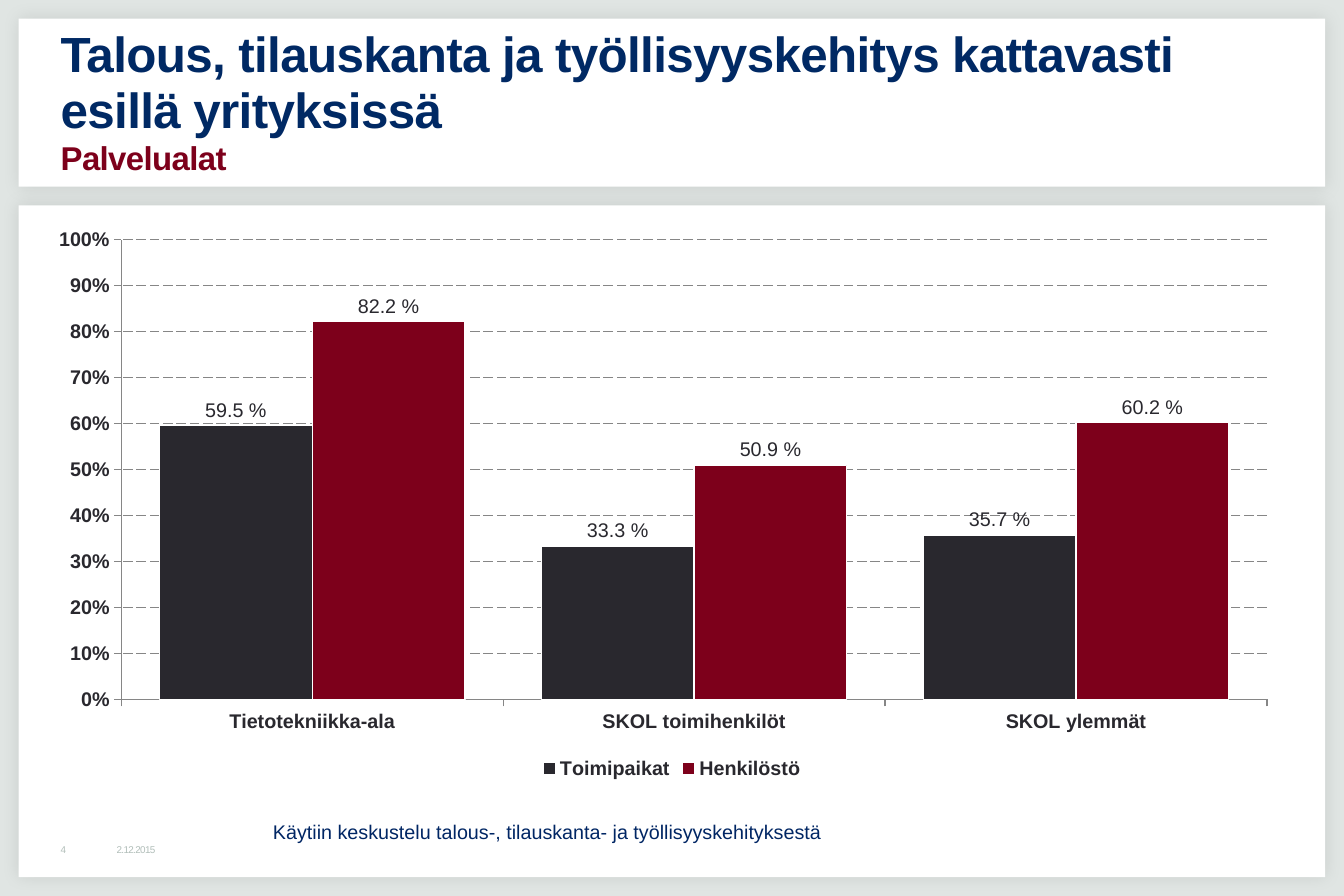
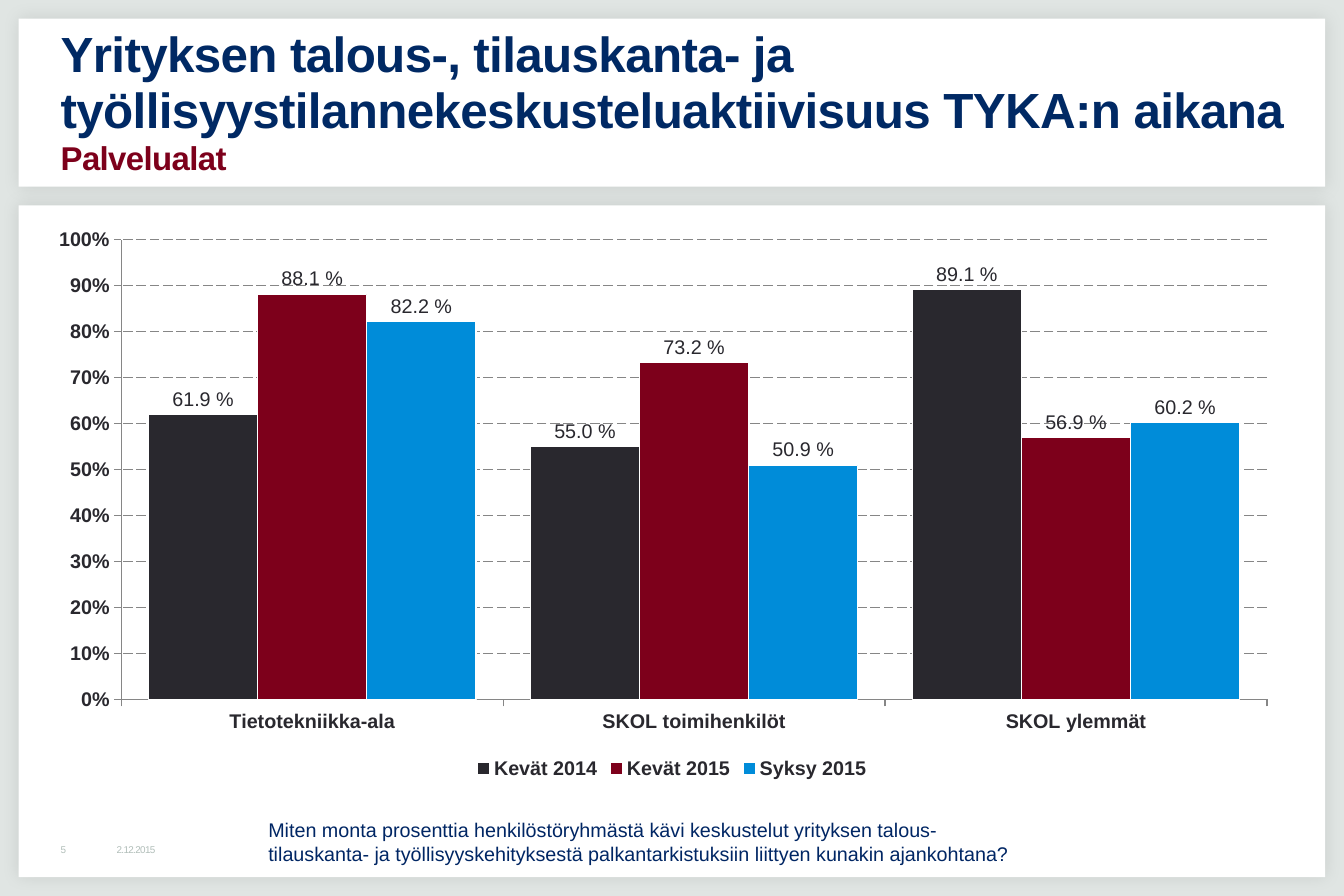
"""Build two column-chart slides on a shared white-panel master."""
import pptx
import pptx.chart.data
import pptx.dml.color
import pptx.enum.chart
import pptx.enum.dml
import pptx.enum.shapes
import pptx.enum.text
import pptx.oxml
import pptx.oxml.ns
import pptx.util

Cm = pptx.util.Cm
Pt = pptx.util.Pt
RGBColor = pptx.dml.color.RGBColor
qn = pptx.oxml.ns.qn

FONT = "Arial"
PAGE = RGBColor(0xE0, 0xE5, 0xE3)
WHITE = RGBColor(0xFF, 0xFF, 0xFF)
TITLE = RGBColor(0x00, 0x29, 0x64)
NOTE = RGBColor(0x00, 0x26, 0x64)
FOOTER = RGBColor(0xB1, 0xBE, 0xB9)
GRID = RGBColor(0x86, 0x86, 0x86)
DARK = RGBColor(0x29, 0x28, 0x2E)
RED = RGBColor(0x7D, 0x00, 0x1B)
BLUE = RGBColor(0x00, 0x8C, 0xD9)
SERIES_COLORS = (DARK, RED, BLUE)
TIGHT = "-40"

SUBTITLE = "Palvelualat"
DATE = "2.12.2015"
CATEGORIES = ("Tietotekniikka-ala", "SKOL toimihenkilöt", "SKOL ylemmät")
PANELS = ((0.4, 0.4, 28, 3.6), (0.4, 4.4, 28, 14.4))
PLOT = {"x": 0.053, "y": 0.028, "w": 0.93, "h": 0.821}
SLIDES = (
    {
        "number": "4",
        "title": "Talous, tilauskanta ja työllisyyskehitys kattavasti esillä yrityksissä",
        "series": (
            ("Toimipaikat", (0.595, 0.333, 0.357)),
            ("Henkilöstö", (0.822, 0.509, 0.602)),
        ),
        "note": "Käytiin keskustelu talous-, tilauskanta- ja työllisyyskehityksestä",
        "note_box": (5.6, 17.45, 15.4, 0.76),
    },
    {
        "number": "5",
        "title": "Yrityksen talous-, tilauskanta- ja "
                 "työllisyystilannekeskusteluaktiivisuus TYKA:n aikana",
        "series": (
            ("Kevät 2014", (0.619, 0.55, 0.891)),
            ("Kevät 2015", (0.881, 0.732, 0.569)),
            ("Syksy 2015", (0.822, 0.509, 0.602)),
        ),
        "note": "Miten monta prosenttia henkilöstöryhmästä kävi keskustelut yrityksen "
                "talous- tilauskanta- ja työllisyyskehityksestä palkantarkistuksiin "
                "liittyen kunakin ajankohtana?",
        "note_box": (5.5, 17.4, 16.9, 1.28),
    },
)


def box(lengths):
    return [Cm(v) for v in lengths]


def drawing(xml):
    return pptx.oxml.parse_xml(xml.replace(">", f" {pptx.oxml.ns.nsdecls('a')}>", 1))


def style_master(master, layout):
    fill = master.background.fill
    fill.solid()
    fill.fore_color.rgb = PAGE
    level = master.element.find(f".//{qn('p:titleStyle')}/{qn('a:lvl1pPr')}")
    level.set("algn", "l")
    level.insert(0, drawing('<a:lnSpc><a:spcPct val="95000"/></a:lnSpc>'))
    font = level.find(qn("a:defRPr"))
    for name, value in (("sz", "3000"), ("b", "1"), ("spc", TIGHT)):
        font.set(name, value)
    color = font.find(qn("a:solidFill"))
    font.replace(color, drawing(f'<a:solidFill><a:srgbClr val="{TITLE}"/></a:solidFill>'))
    font.find(qn("a:latin")).set("typeface", FONT)
    title = layout.placeholders[0]
    title.left, title.top, title.width, title.height = box((1.2, 0.8, 26.8, 2.8))
    tf = title.text_frame
    tf.auto_size = pptx.enum.text.MSO_AUTO_SIZE.NONE
    tf.vertical_anchor = pptx.enum.text.MSO_ANCHOR.MIDDLE
    tf.margin_left = Cm(0.1)


def add_panels(s, master):
    for i, panel in enumerate(PANELS):
        sp = s.shapes.add_shape(pptx.enum.shapes.MSO_SHAPE.RECTANGLE, *box(panel))
        sp.name = f"Panel {i + 1}"
        sp.fill.solid()
        sp.fill.fore_color.rgb = WHITE
        sp.line.fill.background()
        sp.element.spPr.append(drawing(
            '<a:effectLst><a:outerShdw blurRad="127000" dist="0" dir="2700000">'
            '<a:srgbClr val="000000"><a:alpha val="10000"/></a:srgbClr>'
            '</a:outerShdw></a:effectLst>'))
        sp.element.nvSpPr.cNvPr.set("id", str(20 + i))
        master.shapes.element.insert(2 + i, sp.element)


def add_text(s, text, lengths, size, color):
    tf = s.shapes.add_textbox(*box(lengths)).text_frame
    tf.word_wrap = True
    tf.text = text
    font = tf.paragraphs[0].runs[0].font
    font.name, font.size = FONT, Pt(size)
    font.color.rgb = color
    return tf


def add_footer(s, text, left, width):
    tf = add_text(s, text, (left, 18, width, 0.4), 6, FOOTER)
    tf.vertical_anchor = pptx.enum.text.MSO_ANCHOR.MIDDLE
    tf.margin_left = tf.margin_right = tf.margin_top = tf.margin_bottom = Cm(0.1)
    tf.paragraphs[0].runs[0].font._element.set("spc", TIGHT)


def set_plot_layout(chart):
    area = chart.element.find(f".//{qn('c:plotArea')}")
    for old in area.findall(qn("c:layout")):
        area.remove(old)
    modes = '<c:xMode val="edge"/><c:yMode val="edge"/>'
    sizes = "".join(f'<c:{k} val="{v}"/>' for k, v in PLOT.items())
    area.insert(0, pptx.oxml.parse_xml(
        f'<c:layout {pptx.oxml.ns.nsdecls("c")}><c:manualLayout>'
        f'<c:layoutTarget val="inner"/>{modes}{sizes}</c:manualLayout></c:layout>'))


def add_columns(s, series):
    data = pptx.chart.data.CategoryChartData(number_format="0.0\\ %")
    data.categories = CATEGORIES
    for name, values in series:
        data.add_series(name, values)
    chart = s.shapes.add_chart(
        pptx.enum.chart.XL_CHART_TYPE.COLUMN_CLUSTERED, *box((1.2, 4.8, 26.4, 12)), data).chart
    chart.has_title = False
    chart.font.name, chart.font.size = FONT, Pt(12)
    chart.font.color.rgb = DARK
    chart.has_legend = True
    chart.legend.position = pptx.enum.chart.XL_LEGEND_POSITION.BOTTOM
    chart.legend.include_in_layout = False
    chart.legend.font.bold = True
    for axis in (chart.category_axis, chart.value_axis):
        axis.major_tick_mark = pptx.enum.chart.XL_TICK_MARK.OUTSIDE
        axis.tick_labels.font.bold = True
        axis.format.line.color.rgb = GRID
        axis.format.line.width = Pt(0.75)
    axis = chart.value_axis
    axis.minimum_scale, axis.maximum_scale, axis.major_unit = 0, 1, 0.1
    axis.tick_labels.number_format = "0%"
    axis.tick_labels.number_format_is_linked = False
    grid = axis.major_gridlines.format.line
    grid.color.rgb = GRID
    grid.width = Pt(0.75)
    grid.dash_style = pptx.enum.dml.MSO_LINE.LONG_DASH
    plot = chart.plots[0]
    plot.gap_width, plot.overlap = 50, 0
    plot.vary_by_categories = False
    for item, color in zip(plot.series, SERIES_COLORS):
        item.format.fill.solid()
        item.format.fill.fore_color.rgb = color
        item.format.line.color.rgb = WHITE
        item.format.line.width = Pt(0.75)
        labels = item.data_labels
        labels.show_value = True
        labels.number_format = "0.0\\ %"
        labels.number_format_is_linked = False
        labels.position = pptx.enum.chart.XL_LABEL_POSITION.OUTSIDE_END
    set_plot_layout(chart)


def add_slide(prs, layout, content):
    s = prs.slides.add_slide(layout)
    tf = s.shapes.title.text_frame
    tf.text = f"{content['title']}\v{SUBTITLE}"
    font = tf.paragraphs[0].runs[1].font
    font.size = Pt(20)
    font.color.rgb = RED
    add_footer(s, DATE, 2.4, 3.6)
    add_footer(s, content["number"], 1.2, 1.2)
    add_columns(s, content["series"])
    add_text(s, content["note"], content["note_box"], 12, NOTE)
    return s


def main():
    prs = pptx.Presentation()
    prs.slide_width, prs.slide_height = Cm(28.8), Cm(19.2)
    layout = prs.slide_layouts[5]
    style_master(prs.slide_master, layout)
    slides = [add_slide(prs, layout, content) for content in SLIDES]
    add_panels(slides[0], prs.slide_master)
    prs.save("out.pptx")


if __name__ == "__main__":
    main()
